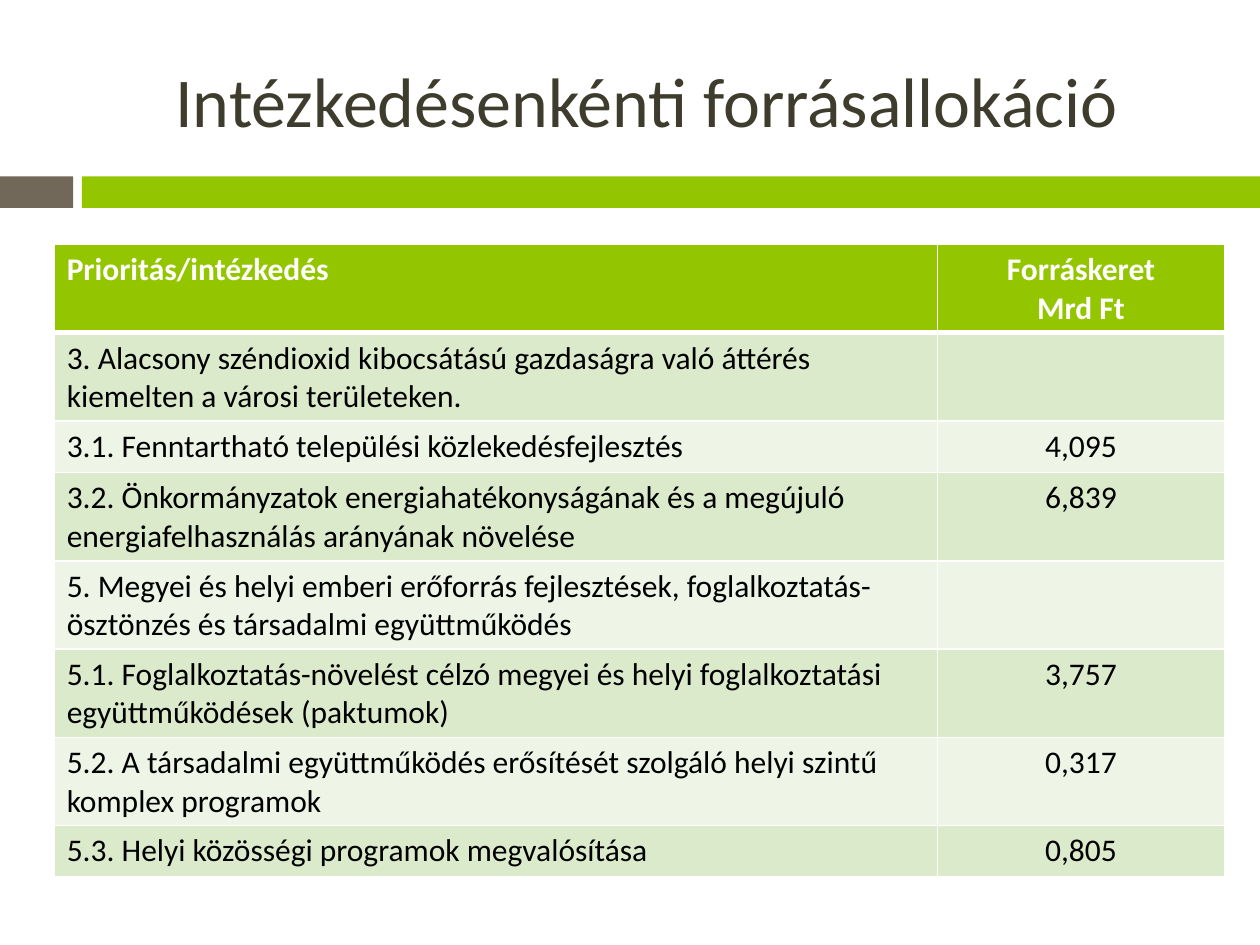
from lxml import etree
from pptx import Presentation
from pptx.dml.color import RGBColor
from pptx.enum.shapes import MSO_SHAPE
from pptx.enum.text import MSO_ANCHOR, PP_ALIGN
from pptx.oxml.ns import qn
from pptx.util import Inches, Pt

RECT = MSO_SHAPE.RECTANGLE
MIDDLE = MSO_ANCHOR.MIDDLE
LEFT, CENTER = PP_ALIGN.LEFT, PP_ALIGN.CENTER

GREEN, BROWN, OLIVE = "94C600", "71685A", "3E3D2D"
WHITE, BLACK = "FFFFFF", "000000"
BANDS = ("DCEACC", "EEF5E7")

HEADER = ("Prioritás/intézkedés", "Forráskeret\nMrd Ft")
ROWS = [
    ("3. Alacsony széndioxid kibocsátású gazdaságra való áttérés "
     "kiemelten a városi területeken.", ""),
    ("3.1. Fenntartható települési közlekedésfejlesztés", "4,095"),
    ("3.2. Önkormányzatok energiahatékonyságának és a megújuló "
     "energiafelhasználás arányának növelése", "6,839"),
    ("5. Megyei és helyi emberi erőforrás fejlesztések, "
     "foglalkoztatás-ösztönzés és társadalmi együttműködés", ""),
    ("5.1. Foglalkoztatás-növelést célzó megyei és helyi foglalkoztatási "
     "együttműködések (paktumok)", "3,757"),
    ("5.2. A társadalmi együttműködés erősítését szolgáló helyi szintű "
     "komplex programok", "0,317"),
    ("5.3. Helyi közösségi programok megvalósítása", "0,805"),
]


def rgb(value):
    return RGBColor.from_string(value)


def write(tf, text, size=18, color=BLACK, bold=False, align=LEFT, font="Calibri"):
    for i, line in enumerate(text.split("\n")):
        p = tf.paragraphs[0] if i == 0 else tf.add_paragraph()
        p.alignment = align
        p.font.size = Pt(size)
        if line:
            r = p.add_run()
            r.text = line
            r.font.name = font
            r.font.size = Pt(size)
            r.font.bold = bold
            r.font.color.rgb = rgb(color)


def set_borders(cell, color, bottom):
    tc_pr = cell._tc.get_or_add_tcPr()
    widths = {"a:lnL": 1, "a:lnR": 1, "a:lnT": 1, "a:lnB": bottom}
    for i, (tag, width) in enumerate(widths.items()):
        ln = etree.Element(qn(tag), w=str(Pt(width)))
        fill = etree.SubElement(ln, qn("a:solidFill"))
        etree.SubElement(fill, qn("a:srgbClr"), val=color)
        tc_pr.insert(i, ln)


class SlideBuilder:
    def __init__(self, slide):
        self.slide = slide

    def bar(self, x, y, w, h, color):
        sp = self.slide.shapes.add_shape(RECT, Inches(x), Inches(y), Inches(w), Inches(h))
        sp.shadow.inherit = False
        sp.fill.solid()
        sp.fill.fore_color.rgb = rgb(color)
        sp.line.fill.background()

    def title(self, x, y, w, h, text):
        sp = self.slide.shapes.add_textbox(Inches(x), Inches(y), Inches(w), Inches(h))
        tf = sp.text_frame
        tf.word_wrap = True
        tf.vertical_anchor = MIDDLE
        write(tf, text, size=40, color=OLIVE, align=CENTER)

    def table(self, x, y, widths, height, row_height, header, rows):
        frame = self.slide.shapes.add_table(
            len(rows) + 1, len(widths), Inches(x), Inches(y),
            Inches(sum(widths)), Inches(height))
        table = frame.table
        for col, width in zip(table.columns, widths):
            col.width = Inches(width)
        for i, values in enumerate([header, *rows]):
            # Rows grow to fit wrapped text
            table.rows[i].height = Inches(row_height)
            is_header = i == 0
            for j, text in enumerate(values):
                cell = table.cell(i, j)
                cell.fill.solid()
                cell.fill.fore_color.rgb = rgb(GREEN if is_header else BANDS[(i - 1) % 2])
                set_borders(cell, WHITE, bottom=3 if is_header else 1)
                write(cell.text_frame, text, bold=is_header,
                      color=WHITE if is_header else BLACK,
                      align=CENTER if j else LEFT)
        frame.height = Inches(height)


def main():
    prs = Presentation()
    prs.slide_width, prs.slide_height = Inches(10), Inches(7.5)
    s = SlideBuilder(prs.slides.add_slide(prs.slide_layouts[6]))

    # Divider bars
    s.bar(0, 1.4, 0.58, 0.25, BROWN)
    s.bar(0.65, 1.4, 9.35, 0.25, GREEN)

    # Title
    s.title(0.67, 0.25, 8.92, 1.08, "Intézkedésenkénti forrásallokáció")

    # Allocation table
    s.table(0.43, 1.94, (7.01, 2.28), 5.01, 0.41, HEADER, ROWS)

    prs.save("out.pptx")


if __name__ == "__main__":
    main()
